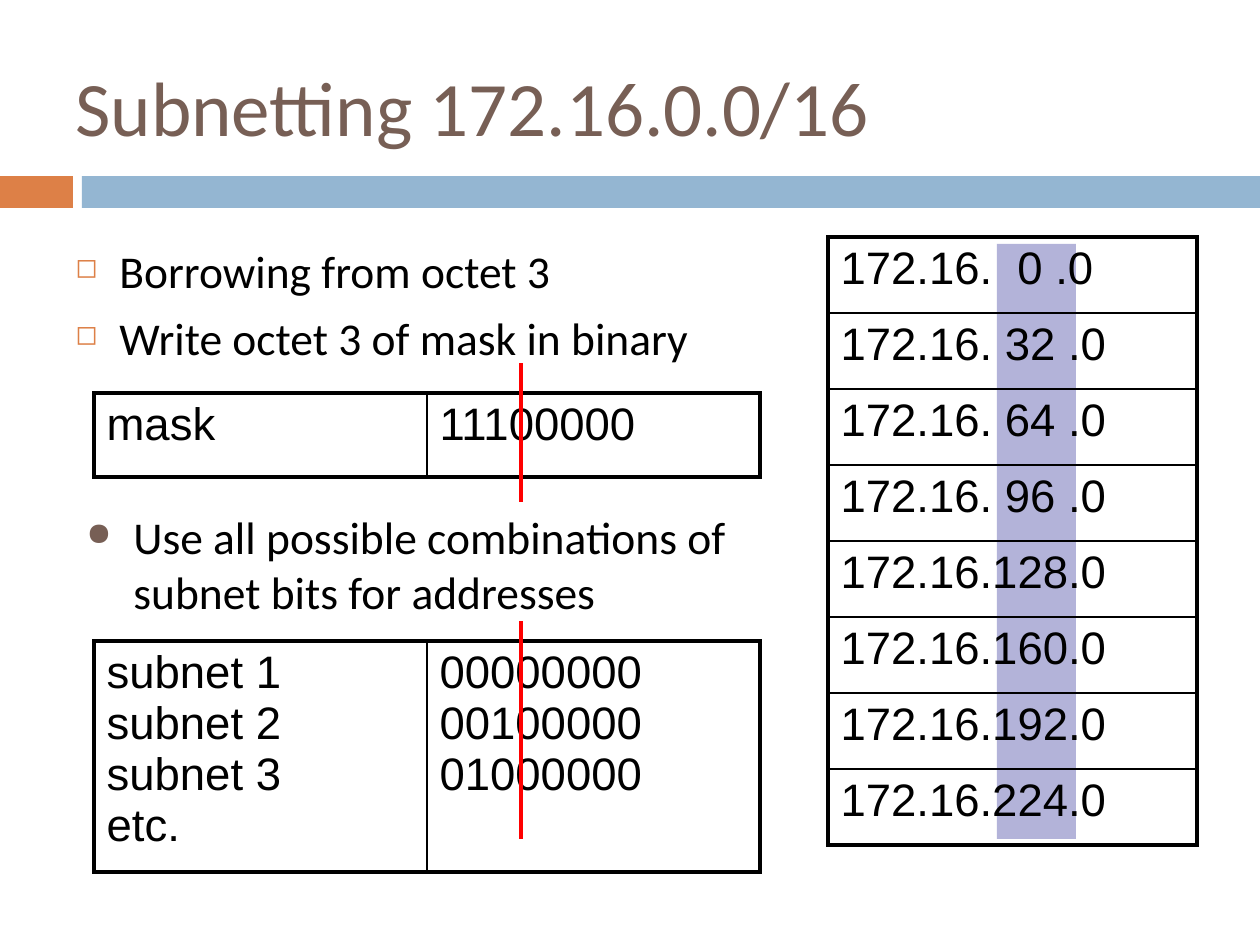
from lxml import etree
from pptx import Presentation
from pptx.dml.color import RGBColor
from pptx.enum.shapes import MSO_CONNECTOR, MSO_SHAPE
from pptx.enum.text import MSO_ANCHOR
from pptx.oxml.ns import qn
from pptx.util import Emu, Pt

RECTANGLE = MSO_SHAPE.RECTANGLE
STRAIGHT = MSO_CONNECTOR.STRAIGHT
MIDDLE, TOP = MSO_ANCHOR.MIDDLE, MSO_ANCHOR.TOP
PX = 914400 / 126

THEME = {
    "orange": "DD8047", "blue": "94B6D2", "lilac": "B3B3D9", "brown": "775F55",
    "black": "000000", "red": "FF0000",
    "text_font": "Calibri", "table_font": "Arial",
    "title_size": 44, "text_size": 26, "outer_line": 2.25, "inner_line": 1,
}


def px(*lengths):
    return [Emu(round(length * PX)) for length in lengths]


def style_paragraph(para, font, size, color):
    for span in para.runs:
        span.font.name = THEME[font]
        span.font.size = Pt(THEME[size])
        span.font.color.rgb = RGBColor.from_string(THEME[color])


deck = Presentation()
deck.slide_width, deck.slide_height = px(1260, 945)
page = deck.slides.add_slide(deck.slide_layouts[6])

# Header bars and the highlight behind the third octet
for left, top, width, height, color in [
    (0, 176, 73, 32, "orange"),
    (82, 176, 1178, 32, "blue"),
    (997, 244, 79, 595, "lilac"),
]:
    bar = page.shapes.add_shape(RECTANGLE, *px(left, top, width, height))
    bar.shadow.inherit = False
    bar.fill.solid()
    bar.fill.fore_color.rgb = RGBColor.from_string(THEME[color])
    bar.line.fill.background()

# Title and bulleted text; a bullet is (character, colour, percent, indent, space before)
square = ("◻", "orange", 60, 44, 7)
dot = ("●", "brown", 70, 47, 5)
for place, lines, size, color, anchor, bullet in [
    ((63, 16, 1040, 179), ["Subnetting 172.16.0.0/16"], "title_size", "brown", MIDDLE, None),
    ((63, 237, 706, 156), ["Borrowing from octet 3", "Write octet 3 of mask in binary"],
     "text_size", "black", TOP, square),
    ((74, 503, 706, 129), ["Use all possible combinations of subnet bits for addresses"],
     "text_size", "black", TOP, dot),
]:
    box = page.shapes.add_textbox(*px(*place))
    frame = box.text_frame
    frame.word_wrap = True
    frame.vertical_anchor = anchor
    frame.text = "\n".join(lines)
    for para in frame.paragraphs:
        style_paragraph(para, "text_font", size, color)
        if bullet:
            character, bullet_color, percent, indent, space = bullet
            para.space_before = Pt(space)
            props = para._p.get_or_add_pPr()
            hang = px(indent)[0]
            props.set("marL", str(hang))
            props.set("indent", str(-hang))
            tint = etree.SubElement(props, qn("a:buClr"))
            etree.SubElement(tint, qn("a:srgbClr"), val=THEME[bullet_color])
            etree.SubElement(props, qn("a:buSzPct"), val=str(percent * 1000))
            etree.SubElement(props, qn("a:buChar"), char=character)

# Tables: heavy outline, thin inner rules, no fill
octets = ["  0 ", " 32 ", " 64 ", " 96 ", "128", "160", "192", "224"]
for left, top, column_width, row_height, rows in [
    (828, 237, 369, 76, [[f"172.16.{octet}.0"] for octet in octets]),
    (94, 393, 333, 84, [["mask", "11100000"]]),
    (94, 641, 333, 216, [["subnet 1\nsubnet 2\nsubnet 3\netc.",
                          "00000000\n00100000\n01000000"]]),
]:
    row_count, column_count = len(rows), len(rows[0])
    table = page.shapes.add_table(
        row_count, column_count,
        *px(left, top, column_width * column_count, row_height * row_count)).table
    table.first_row = table.horz_banding = False
    for column in table.columns:
        column.width = px(column_width)[0]
    for r, values in enumerate(rows):
        table.rows[r].height = px(row_height)[0]
        for c, value in enumerate(values):
            cell = table.cell(r, c)
            para = cell.text_frame.paragraphs[0]
            para.text = value
            para.space_before = Pt(5)
            style_paragraph(para, "table_font", "text_size", "black")
            cell.fill.background()
            cell_props = cell._tc.get_or_add_tcPr()
            on_outline = {"L": c == 0, "R": c == column_count - 1,
                          "T": r == 0, "B": r == row_count - 1}
            for index, (side, outer) in enumerate(on_outline.items()):
                weight = THEME["outer_line" if outer else "inner_line"]
                border = etree.Element(qn(f"a:ln{side}"), w=str(Pt(weight)))
                paint = etree.SubElement(border, qn("a:solidFill"))
                etree.SubElement(paint, qn("a:srgbClr"), val=THEME["black"])
                cell_props.insert(index, border)

# Red dividers between subnet bits and host bits
for start, end in [(502, 363), (839, 621)]:
    divider = page.shapes.add_connector(STRAIGHT, *px(521, start, 521, end))
    divider.line.color.rgb = RGBColor.from_string(THEME["red"])
    divider.line.width = Pt(THEME["outer_line"])
    etree.SubElement(divider._element.spPr, qn("a:effectLst"))

deck.save("out.pptx")
